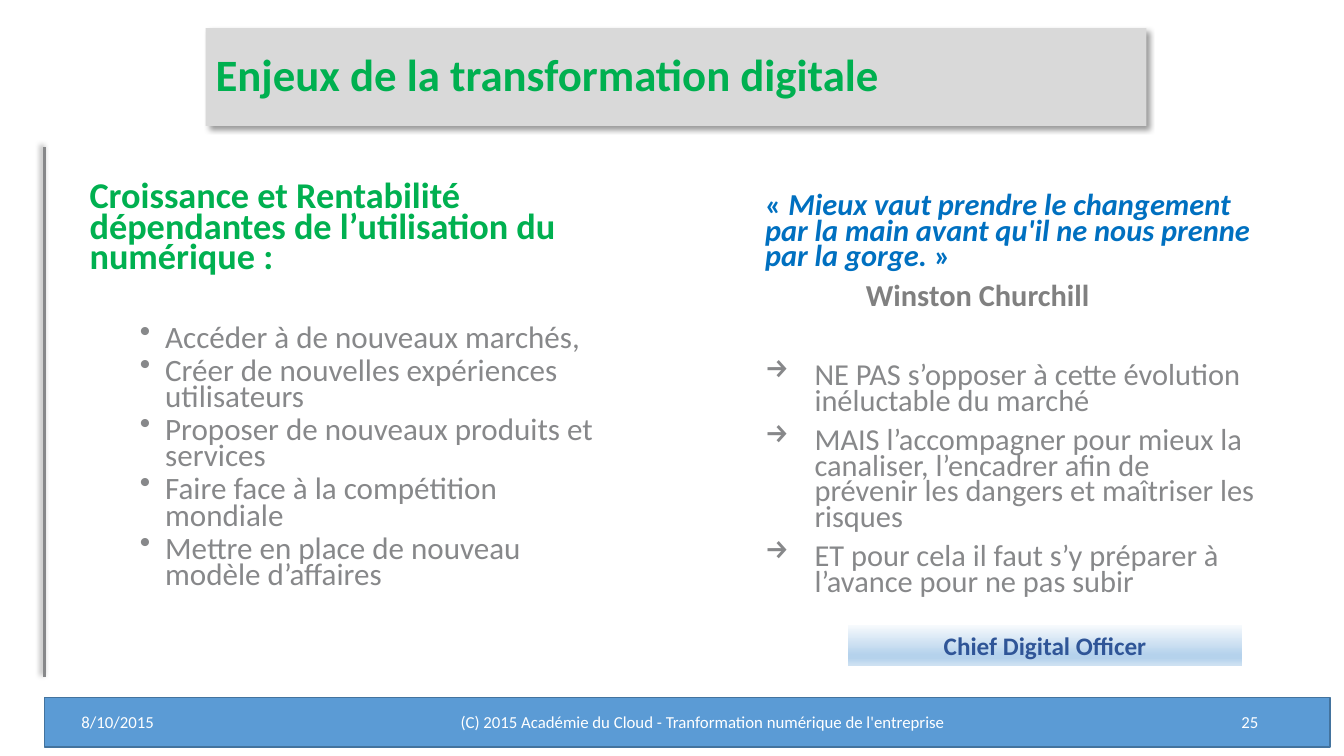
from lxml.etree import SubElement
from pptx import Presentation
from pptx.dml.color import RGBColor
from pptx.enum.shapes import MSO_CONNECTOR, MSO_SHAPE
from pptx.enum.text import MSO_ANCHOR, PP_ALIGN
from pptx.oxml.ns import qn
from pptx.util import Inches, Pt

COLORS = {
    "green": "00B050", "blue": "0070C0", "navy": "2F5597", "gray": "87888A",
    "author": "808080", "panel": "D9D9D9", "bar": "5B9BD5", "edge": "43739E",
    "white": "FFFFFF", "black": "000000",
    "pale": "F7FAFD", "sky": "B5D2EC", "mist": "CEE1F2",
}


def rgb(name):
    return RGBColor.from_string(COLORS[name])


def add(parent, tag, **attrs):
    return SubElement(parent, qn(tag), {k: str(v) for k, v in attrs.items()})


class SlideBuilder:
    font = "Calibri"

    def __init__(self, slide):
        self.slide = slide

    def effects(self, sp, angle=None):
        lst = add(sp._element.spPr, "a:effectLst")
        if angle is not None:
            shadow = add(lst, "a:outerShdw", blurRad=Pt(4), dist=Pt(3),
                         dir=angle * 60000, algn="ctr", rotWithShape=0)
            color = add(shadow, "a:srgbClr", val=COLORS["black"])
            add(color, "a:alpha", val=40000)

    def rect(self, at, fill=None, line=None, stops=None, shadow=None):
        sp = self.slide.shapes.add_shape(MSO_SHAPE.RECTANGLE, *map(Inches, at))
        if stops:
            sp.fill.gradient()
            sp.fill.gradient_angle = 270
            gs_list = sp._element.spPr.find(qn("a:gradFill")).find(qn("a:gsLst"))
            gs_list.clear()
            for pos, name in stops:
                gs = add(gs_list, "a:gs", pos=pos * 1000)
                add(gs, "a:srgbClr", val=COLORS[name])
        else:
            sp.fill.solid()
            sp.fill.fore_color.rgb = rgb(fill)
        if line:
            sp.line.color.rgb = rgb(line)
            sp.line.width = Pt(1)
        else:
            sp.line.fill.background()
        self.effects(sp, shadow)
        return sp

    def line(self, start, end, color, width, shadow):
        ln = self.slide.shapes.add_connector(
            MSO_CONNECTOR.STRAIGHT, *map(Inches, start + end))
        ln.line.color.rgb = rgb(color)
        ln.line.width = Pt(width)
        self.effects(ln, shadow)

    def box(self, at, paragraphs, anchor=MSO_ANCHOR.TOP):
        sp = self.slide.shapes.add_textbox(*map(Inches, at))
        self.text(sp, paragraphs, anchor)

    def text(self, sp, paragraphs, anchor=MSO_ANCHOR.TOP):
        tf = sp.text_frame
        tf.word_wrap = True
        tf.vertical_anchor = anchor
        for i, item in enumerate(paragraphs):
            p = tf.add_paragraph() if i else tf.paragraphs[0]
            self.paragraph(p, **item)

    def paragraph(self, p, runs, size, color, bold=False, bullet=None,
                  left=0, hanging=0, **formats):
        pPr = p._p.get_or_add_pPr()
        pPr.set("marL", str(Inches(left)))
        pPr.set("indent", str(-Inches(hanging)))
        if bullet:
            add(pPr, "a:buChar", char=bullet)
        for name, value in ({"alignment": PP_ALIGN.LEFT} | formats).items():
            setattr(p, name, value)
        for text, italic in [(runs, False)] if isinstance(runs, str) else runs:
            r = p.add_run()
            r.text = text
            font = {"name": self.font, "size": Pt(size), "bold": bold, "italic": italic}
            for name, value in font.items():
                setattr(r.font, name, value)
            r.font.color.rgb = rgb(color)

    def bullets(self, texts, char, size, left, hanging, first_gap, gap):
        return [dict(runs=t, size=size, color="gray", bullet=char, left=left,
                     hanging=hanging, line_spacing=0.7,
                     space_before=Pt(gap if i else first_gap))
                for i, t in enumerate(texts)]


def main():
    prs = Presentation()
    prs.slide_width, prs.slide_height = Inches(13.33), Inches(7.5)
    s = SlideBuilder(prs.slides.add_slide(prs.slide_layouts[6]))

    s.rect((0.44, 6.92, 12.75, 0.49), "bar", line="edge")
    s.line((0.44, 1.46), (0.44, 6.72), "gray", 2, shadow=225)

    title = s.rect((2.04, 0.28, 9.33, 0.97), "panel", shadow=45)
    s.text(title, [dict(runs="Enjeux de la transformation digitale", size=32,
                        color="green", bold=True, line_spacing=0.9)],
           MSO_ANCHOR.MIDDLE)

    goals = [
        "Accéder à de nouveaux marchés,",
        "Créer de nouvelles expériences utilisateurs",
        "Proposer de nouveaux produits et services",
        "Faire face à la compétition mondiale",
        "Mettre en place de nouveau modèle d’affaires",
    ]
    s.box((0.79, 1.78, 5.34, 4.39), [
        dict(runs="Croissance et Rentabilité dépendantes de l’utilisation du numérique :",
             size=25.9, color="green", bold=True, line_spacing=0.7),
        *s.bullets(goals, "•", 22.2, 0.75, 0.25, 37, 5),
    ])

    advice = [
        "NE PAS s’opposer à cette évolution inéluctable du marché",
        "MAIS l’accompagner pour mieux la canaliser, l’encadrer afin de "
        "prévenir les dangers et maîtriser les risques",
        "ET pour cela il faut s’y préparer à l’avance pour ne pas subir",
    ]
    quote = [
        ("« ", False),
        ("Mieux vaut prendre le changement par la main avant qu'il ne nous "
         "prenne par la gorge. ", True),
        ("»", False),
    ]
    s.box((7.49, 1.89, 5.09, 4.16), [
        dict(runs=quote, size=21.7, color="blue", bold=True, line_spacing=0.7),
        dict(runs="Winston Churchill", size=21.7, color="author", bold=True,
             left=1, line_spacing=0.7, space_before=Pt(10)),
        *s.bullets(advice, "→", 21.7, 0.49, 0.49, 38.5, 10),
    ])

    role = s.rect((8.41, 6.2, 3.91, 0.4),
                  stops=[(0, "pale"), (74, "sky"), (83, "sky"), (100, "mist")])
    s.text(role, [dict(runs="Chief Digital Officer", size=18, color="navy",
                       bold=True, alignment=PP_ALIGN.CENTER)])

    footer = [
        (0.71, 1.15, "8/10/2015", PP_ALIGN.LEFT),
        (2.14, 9.66, "(C) 2015 Académie du Cloud - Tranformation numérique de l'entreprise",
         PP_ALIGN.CENTER),
        (12.06, 0.52, "25", PP_ALIGN.RIGHT),
    ]
    for left, width, text, align in footer:
        s.box((left, 7.05, width, 0.23),
              [dict(runs=text, size=12, color="white", alignment=align)],
              MSO_ANCHOR.MIDDLE)

    prs.save("out.pptx")


if __name__ == "__main__":
    main()
